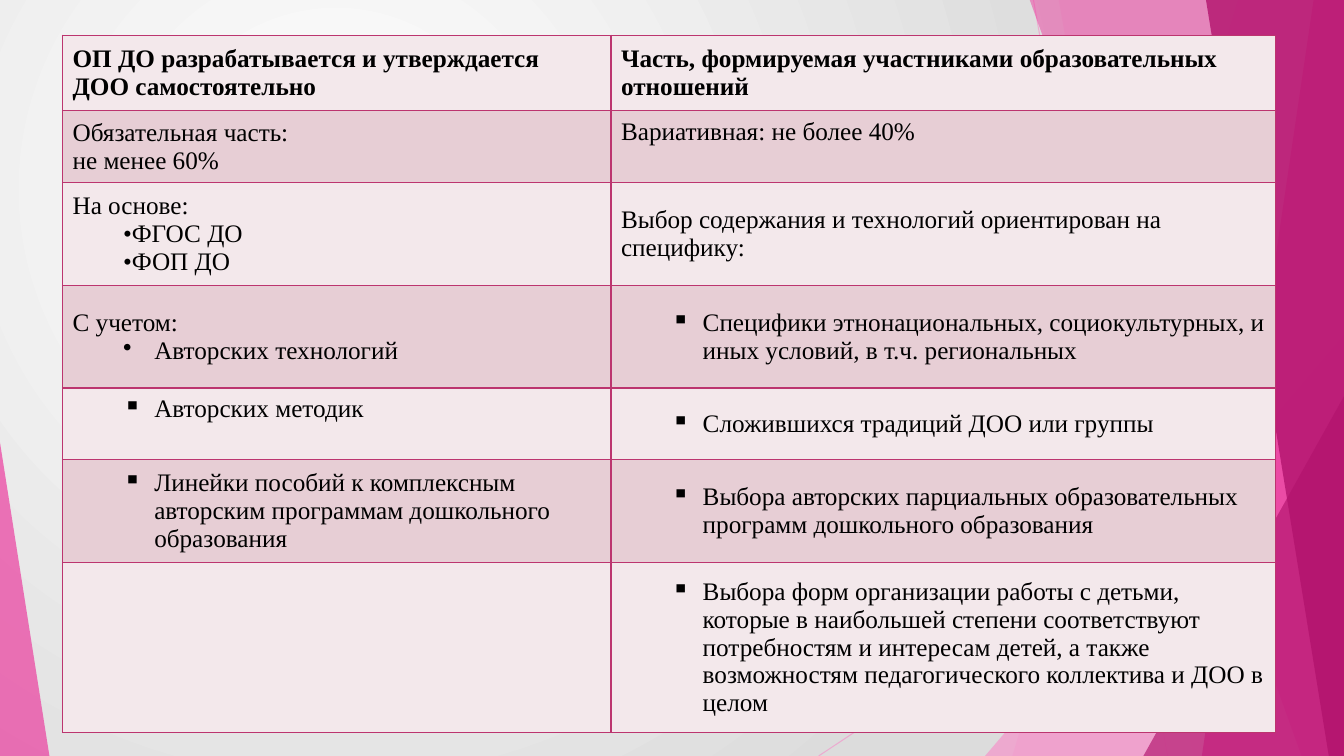
from dataclasses import dataclass

from lxml.etree import SubElement
from pptx import Presentation
from pptx.dml.color import RGBColor
from pptx.enum.shapes import MSO_CONNECTOR, MSO_SHAPE
from pptx.enum.text import MSO_ANCHOR
from pptx.oxml import parse_xml
from pptx.oxml.ns import nsdecls, qn
from pptx.util import Pt

EMU_PER_PX = 9144
SLIDE_WIDTH, SLIDE_HEIGHT = 1333, 750


@dataclass(frozen=True)
class Theme:
    font: str = "Times New Roman"
    text_size: int = 18
    text: str = "000000"
    pale_pink: str = "F496CB"
    pink: str = "EB3D9F"
    crimson: str = "B2136D"
    border: str = "BC356F"
    bands: tuple = ("F3E8EB", "E7CED5")
    glow: tuple = ("FFFFFF", "DCDCDC")


THEME = Theme()

RAYS = [(1025, 0, 1158, 750), (1333, 403, 812, 750)]

LEFT_COLUMN, RIGHT_COLUMN = 544, 659
ROW_HEIGHTS = [75, 71, 102, 102, 71, 102, 169]
PLAIN, INDENTED, DOT, SQUARE = "plain", "indented", "•", "▪"

ROWS = [
    ([(PLAIN, "ОП ДО разрабатывается и утверждается ДОО самостоятельно")],
     [(PLAIN, "Часть, формируемая участниками образовательных отношений")]),
    ([(PLAIN, "Обязательная часть:"), (PLAIN, "не менее 60%")],
     [(PLAIN, "Вариативная: не более 40%")]),
    ([(PLAIN, "На основе:"), (INDENTED, "•ФГОС ДО"), (INDENTED, "•ФОП ДО")],
     [(PLAIN, "Выбор содержания и технологий ориентирован на специфику:")]),
    ([(PLAIN, "С учетом:"), (DOT, "Авторских технологий")],
     [(SQUARE, "Специфики этнонациональных, социокультурных, и иных условий, "
               "в т.ч. региональных")]),
    ([(SQUARE, "Авторских методик")],
     [(SQUARE, "Сложившихся традиций ДОО или группы")]),
    ([(SQUARE, "Линейки пособий к комплексным авторским программам "
               "дошкольного образования")],
     [(SQUARE, "Выбора авторских парциальных образовательных программ "
               "дошкольного образования")]),
    ([],
     [(SQUARE, "Выбора форм организации работы с детьми, которые в наибольшей "
               "степени соответствуют потребностям и интересам детей, а также "
               "возможностям педагогического коллектива и ДОО в целом")]),
]
TOP_ANCHORED = {(1, 1), (4, 0)}


def px(length):
    return length * EMU_PER_PX


def set_alpha(properties, percent):
    color = properties.find(".//" + qn("a:srgbClr"))
    SubElement(color, qn("a:alpha")).set("val", str(percent * 1000))


def paint_background(slide):
    slide.background.fill.solid()
    properties = slide.element.find(".//" + qn("p:bgPr"))
    properties.remove(properties.find(qn("a:solidFill")))
    center, edge = THEME.glow
    properties.insert(0, parse_xml(
        f'<a:gradFill {nsdecls("a")} rotWithShape="1"><a:gsLst>'
        f'<a:gs pos="0"><a:srgbClr val="{center}"/></a:gs>'
        f'<a:gs pos="100000"><a:srgbClr val="{edge}"/></a:gs></a:gsLst>'
        '<a:path path="circle"><a:fillToRect l="50000" t="50000" '
        'r="100000" b="100000"/></a:path></a:gradFill>'))


def add_ray(slide, start_x, start_y, end_x, end_y):
    ray = slide.shapes.add_connector(
        MSO_CONNECTOR.STRAIGHT, px(start_x), px(start_y), px(end_x), px(end_y))
    ray.line.color.rgb = RGBColor.from_string(THEME.pale_pink)
    ray.line.width = Pt(0.75)
    properties = ray.element.spPr
    set_alpha(properties, 70)
    SubElement(properties, qn("a:effectLst"))


def tint(facet, color, alpha):
    facet.shadow.inherit = False
    facet.line.fill.background()
    facet.fill.solid()
    facet.fill.fore_color.rgb = RGBColor.from_string(color)
    set_alpha(facet.element.spPr, alpha)


def add_band(slide, top_x, bottom_x, color, alpha):
    outline = slide.shapes.build_freeform(top_x, -1, scale=EMU_PER_PX)
    outline.add_line_segments(
        [(SLIDE_WIDTH, -1), (SLIDE_WIDTH, SLIDE_HEIGHT), (bottom_x, SLIDE_HEIGHT)])
    tint(outline.convert_to_shape(), color, alpha)


def add_corner(slide, left, top, width, apex, color, alpha):
    corner = slide.shapes.add_shape(
        MSO_SHAPE.ISOSCELES_TRIANGLE,
        px(left), px(top), px(width), px(SLIDE_HEIGHT - top))
    corner.adjustments[0] = apex
    tint(corner, color, alpha)


def add_decor(slide):
    for ray in RAYS:
        add_ray(slide, *ray)
    add_band(slide, 1228, 1004, THEME.pale_pink, 36)
    add_band(slide, 1050, 1183, THEME.pale_pink, 20)
    add_corner(slide, 977, 333, 356, 1, THEME.pale_pink, 72)
    add_band(slide, 1021, 1291, THEME.pink, 50)
    add_band(slide, 1303, 1192, THEME.pink, 70)
    add_band(slide, 1196, 1318, THEME.crimson, 80)
    add_corner(slide, 1134, 393, 199, 1, THEME.crimson, 66)
    add_corner(slide, 0, 439, 49, 0, THEME.pink, 70)


def write_item(paragraph, style, wording, bold):
    if style != PLAIN:
        paragraph.level = 1
        bulleted = style != INDENTED
        properties = paragraph._p.get_or_add_pPr()
        properties.set("marL", str(px(81 if bulleted else 50)))
        properties.set("indent", str(px(-31 if bulleted else 0)))
        if bulleted:
            SubElement(properties, qn("a:buChar")).set("char", style)
    run = paragraph.add_run()
    run.text = wording
    run.font.name = THEME.font
    run.font.size = Pt(THEME.text_size)
    run.font.bold = bold
    run.font.color.rgb = RGBColor.from_string(THEME.text)


def style_cell(cell, band, anchor):
    cell.fill.solid()
    cell.fill.fore_color.rgb = RGBColor.from_string(band)
    cell.vertical_anchor = anchor
    cell.margin_top = cell.margin_bottom = px(7)
    cell.margin_left, cell.margin_right = px(10), px(9)
    properties = cell._tc.get_or_add_tcPr()
    for position, side in enumerate(("lnL", "lnR", "lnT", "lnB")):
        properties.insert(position, parse_xml(
            f'<a:{side} {nsdecls("a")} w="{Pt(1)}"><a:solidFill>'
            f'<a:srgbClr val="{THEME.border}"/></a:solidFill></a:{side}>'))


def add_program_table(slide):
    table = slide.shapes.add_table(
        len(ROWS), 2, px(62), px(35),
        px(LEFT_COLUMN + RIGHT_COLUMN), px(sum(ROW_HEIGHTS))).table
    table.first_row = table.horz_banding = False
    for column, width in zip(table.columns, (LEFT_COLUMN, RIGHT_COLUMN)):
        column.width = px(width)
    for row_index, row in enumerate(ROWS):
        table.rows[row_index].height = px(ROW_HEIGHTS[row_index])
        for column_index, items in enumerate(row):
            cell = table.cell(row_index, column_index)
            raised = (row_index, column_index) in TOP_ANCHORED
            style_cell(cell, THEME.bands[row_index % 2],
                       MSO_ANCHOR.TOP if raised else MSO_ANCHOR.MIDDLE)
            frame = cell.text_frame
            for item_index, (style, wording) in enumerate(items):
                paragraph = frame.add_paragraph() if item_index else frame.paragraphs[0]
                write_item(paragraph, style, wording, bold=row_index == 0)


def main():
    presentation = Presentation()
    presentation.slide_width = px(SLIDE_WIDTH)
    presentation.slide_height = px(SLIDE_HEIGHT)
    slide = presentation.slides.add_slide(presentation.slide_layouts[6])
    paint_background(slide)
    add_decor(slide)
    add_program_table(slide)
    presentation.save("out.pptx")


if __name__ == "__main__":
    main()
